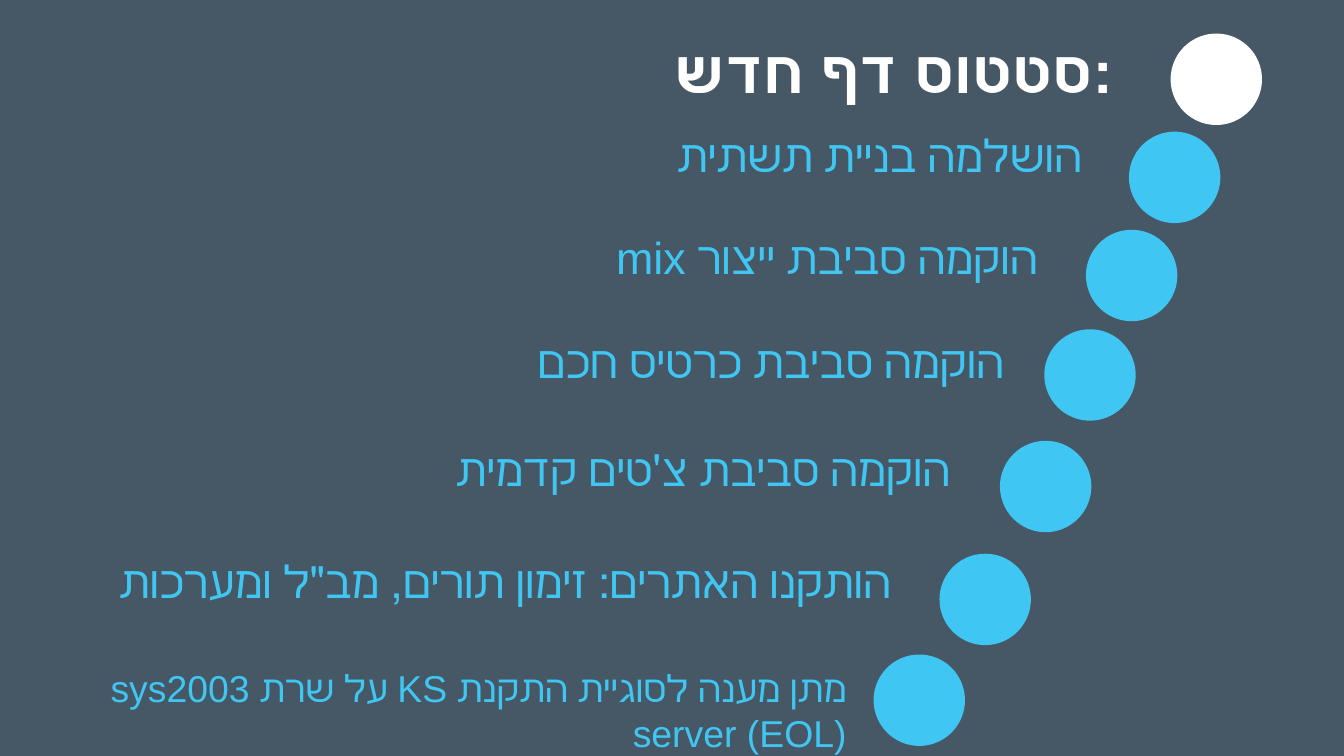
"""Build the status slide: a heading and a slanted trail of dots with captions."""
import dataclasses

import pptx
import pptx.dml.color
import pptx.enum.shapes
import pptx.enum.text
import pptx.util

Inches = pptx.util.Inches


@dataclasses.dataclass(frozen=True)
class Theme:
    """Colours, font and type sizes of the slide."""
    back: str = "465766"
    accent: str = "40C6F2"
    white: str = "FFFFFF"
    font: str = "Arial"
    head: int = 32
    body: int = 24
    small: int = 20
    dot: float = 0.68
    inset: float = 0.1


THEME = Theme()

STEPS = [
    ("הושלמה בניית תשתית", (2.81, 0.85, 5.34, 0.69), (8.4, 0.98), {}),
    ("הוקמה סביבת ייצור mix", (1.15, 1.61, 6.67, 0.73), (8.08, 1.71), {"rtl": True}),
    ("הוקמה סביבת כרטיס חכם", (1.64, 2.38, 5.93, 0.66), (7.77, 2.45), {}),
    ("הוקמה סביבת צ'טים קדמית", (2.98, 3.19, 4.19, 0.64), (7.44, 3.28), {}),
    ('הותקנו האתרים: זימון תורים, מב"ל ומערכות', (0, 4.02, 6.73, 0.64), (6.99, 4.12), {}),
    ("מתן מענה לסוגיית התקנת KS על שרת sys2003 server (EOL)",
     (0, 4.85, 6.4, 0.64), (6.5, 4.87), {"rtl": True, "size": THEME.small}),
]


def tint(code):
    """Return the colour for a hex code."""
    return pptx.dml.color.RGBColor.from_string(code)


def write(shape, text, size=THEME.body, color=THEME.accent, bold=False, rtl=False):
    """Put right-aligned text into a shape."""
    frame = shape.text_frame
    frame.word_wrap = True
    frame.auto_size = pptx.enum.text.MSO_AUTO_SIZE.NONE
    frame.vertical_anchor = pptx.enum.text.MSO_ANCHOR.TOP
    for side in ("left", "top", "right", "bottom"):
        setattr(frame, f"margin_{side}", Inches(THEME.inset))
    line = frame.paragraphs[0]
    line.alignment = pptx.enum.text.PP_ALIGN.RIGHT
    line._p.get_or_add_pPr().set("rtl", str(int(rtl)))
    run = line.add_run()
    run.text = text
    font = run.font
    font.size = pptx.util.Pt(size)
    font.bold = bold
    font.color.rgb = tint(color)
    font.name = THEME.font


def add_dot(slide, left, top, color=THEME.accent):
    """Draw one round marker."""
    side = Inches(THEME.dot)
    oval = pptx.enum.shapes.MSO_SHAPE.OVAL
    dot = slide.shapes.add_shape(oval, Inches(left), Inches(top), side, side)
    dot.shadow.inherit = False
    dot.fill.solid()
    dot.fill.fore_color.rgb = tint(color)
    dot.line.fill.background()


def add_head(slide, text, box):
    """Place and fill the title."""
    title = slide.shapes.title
    title.left, title.top, title.width, title.height = map(Inches, box)
    write(title, text, size=THEME.head, color=THEME.white, bold=True)


def add_step(slide, text, box, spot, style):
    """Add one caption with its marker."""
    write(slide.shapes.add_textbox(*map(Inches, box)), text, **style)
    add_dot(slide, *spot)


def main():
    """Build and save the slide."""
    deck = pptx.Presentation()
    deck.slide_width, deck.slide_height = Inches(10), Inches(5.625)
    slide = deck.slides.add_slide(deck.slide_layouts[5])
    slide.background.fill.solid()
    slide.background.fill.fore_color.rgb = tint(THEME.back)
    add_head(slide, "סטטוס דף חדש:", (2.53, 0.15, 5.85, 0.76))
    add_dot(slide, 8.71, 0.25, THEME.white)
    for step in STEPS:
        add_step(slide, *step)
    deck.save("out.pptx")


if __name__ == "__main__":
    main()
